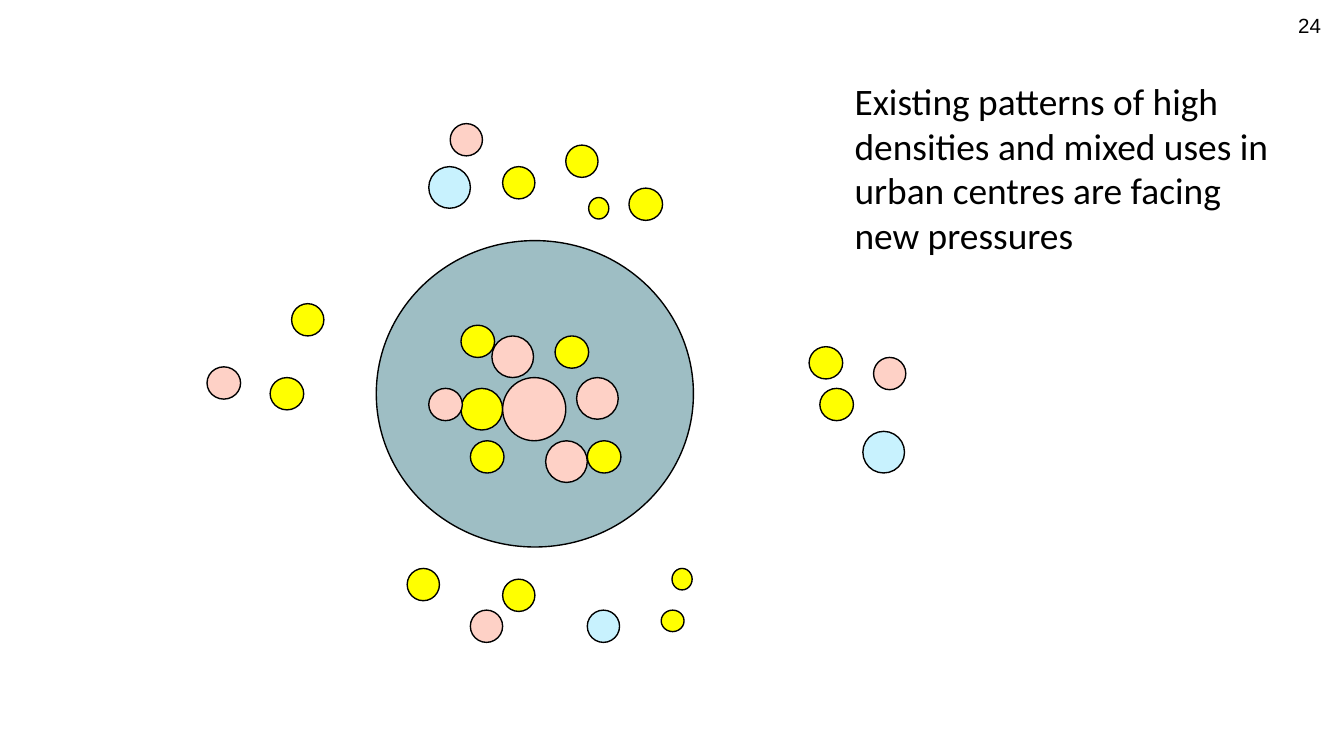
from pptx import Presentation
from pptx.dml.color import RGBColor
from pptx.enum.shapes import MSO_SHAPE
from pptx.enum.text import PP_ALIGN
from pptx.util import Inches, Pt

OVAL = MSO_SHAPE.OVAL
LEFT, RIGHT = PP_ALIGN.LEFT, PP_ALIGN.RIGHT
WIDTH = Inches(10)
HEIGHT = WIDTH * 9 // 16

COLORS = {
    "core": "9EBEC4",
    "blue": "C8F2FE",
    "pink": "FED1C6",
    "yellow": "FFFF00",
    "black": "000000",
}

# Width and height of each circle size
SIZES = {
    "city": (2.36, 2.28),
    "large": (0.47, 0.47),
    "mid": (0.31, 0.31),
    "wide": (0.25, 0.24),
    "small": (0.24, 0.24),
    "tiny": (0.17, 0.16),
    "slim": (0.15, 0.16),
}

# Each circle: colour, size, left, top; later ones lie in front
GROUPS = {
    "centre": [
        ("core", "city", 2.8, 1.79),
        ("yellow", "mid", 3.43, 2.89),
        ("pink", "wide", 3.19, 2.89),
        ("pink", "mid", 3.66, 2.5),
        ("pink", "large", 3.74, 2.81),
        ("pink", "mid", 4.06, 3.28),
        ("pink", "mid", 4.29, 2.81),
        ("yellow", "wide", 4.13, 2.5),
        ("yellow", "wide", 4.37, 3.28),
        ("yellow", "wide", 3.5, 3.28),
        ("yellow", "wide", 3.43, 2.42),
    ],
    "north": [
        ("blue", "mid", 3.19, 1.24),
        ("pink", "small", 3.35, 0.92),
        ("yellow", "small", 3.74, 1.24),
        ("yellow", "small", 4.21, 1.08),
        ("yellow", "slim", 4.38, 1.47),
        ("yellow", "wide", 4.68, 1.4),
    ],
    "west": [
        ("yellow", "small", 2.17, 2.26),
        ("yellow", "wide", 2.01, 2.81),
        ("pink", "wide", 1.54, 2.73),
    ],
    "east": [
        ("yellow", "wide", 6.02, 2.58),
        ("yellow", "wide", 6.1, 2.89),
        ("pink", "small", 6.5, 2.66),
        ("blue", "mid", 6.42, 3.21),
    ],
    "south": [
        ("yellow", "small", 3.03, 4.23),
        ("pink", "small", 3.5, 4.54),
        ("yellow", "small", 3.74, 4.31),
        ("blue", "small", 4.37, 4.54),
        ("yellow", "tiny", 4.92, 4.54),
        ("yellow", "slim", 5, 4.23),
    ],
}

# Each text: wording, box, side and top margins, alignment, font
TEXTS = [
    ("24", (9.46, 0.06, 0.46, 0.19), (0.09, 0.04), RIGHT,
     {"name": "Arial", "size": Pt(11)}),
    ("Existing patterns of high densities and mixed uses in urban centres "
     "are facing new pressures",
     (6.26, 0.53, 3.31, 1.45), (0.1, 0.05), LEFT,
     {"name": "Calibri", "size": Pt(20)}),
]


def rgb(name):
    return RGBColor.from_string(COLORS[name])


def style(item, values):
    for key, value in values.items():
        setattr(item, key, value)


def add_dot(slide, color, size, left, top):
    box = map(Inches, (left, top, *SIZES[size]))
    dot = slide.shapes.add_shape(OVAL, *box)
    dot.shadow.inherit = False
    dot.fill.solid()
    dot.fill.fore_color.rgb = rgb(color)
    dot.line.color.rgb = rgb("black")
    dot.line.width = Pt(0.75)


def add_text(slide, words, box, pad, align, font):
    frame = slide.shapes.add_textbox(*map(Inches, box)).text_frame
    side, edge = map(Inches, pad)
    style(frame, {"word_wrap": True, "margin_left": side, "margin_right": side,
                  "margin_top": edge, "margin_bottom": edge})
    para = frame.paragraphs[0]
    para.alignment = align
    run = para.add_run()
    run.text = words
    style(run.font, font)
    run.font.color.rgb = rgb("black")


def main():
    deck = Presentation()
    deck.slide_width, deck.slide_height = WIDTH, HEIGHT
    slide = deck.slides.add_slide(deck.slide_layouts[6])
    for dots in GROUPS.values():
        for dot in dots:
            add_dot(slide, *dot)
    for text in TEXTS:
        add_text(slide, *text)
    deck.save("out.pptx")


if __name__ == "__main__":
    main()
